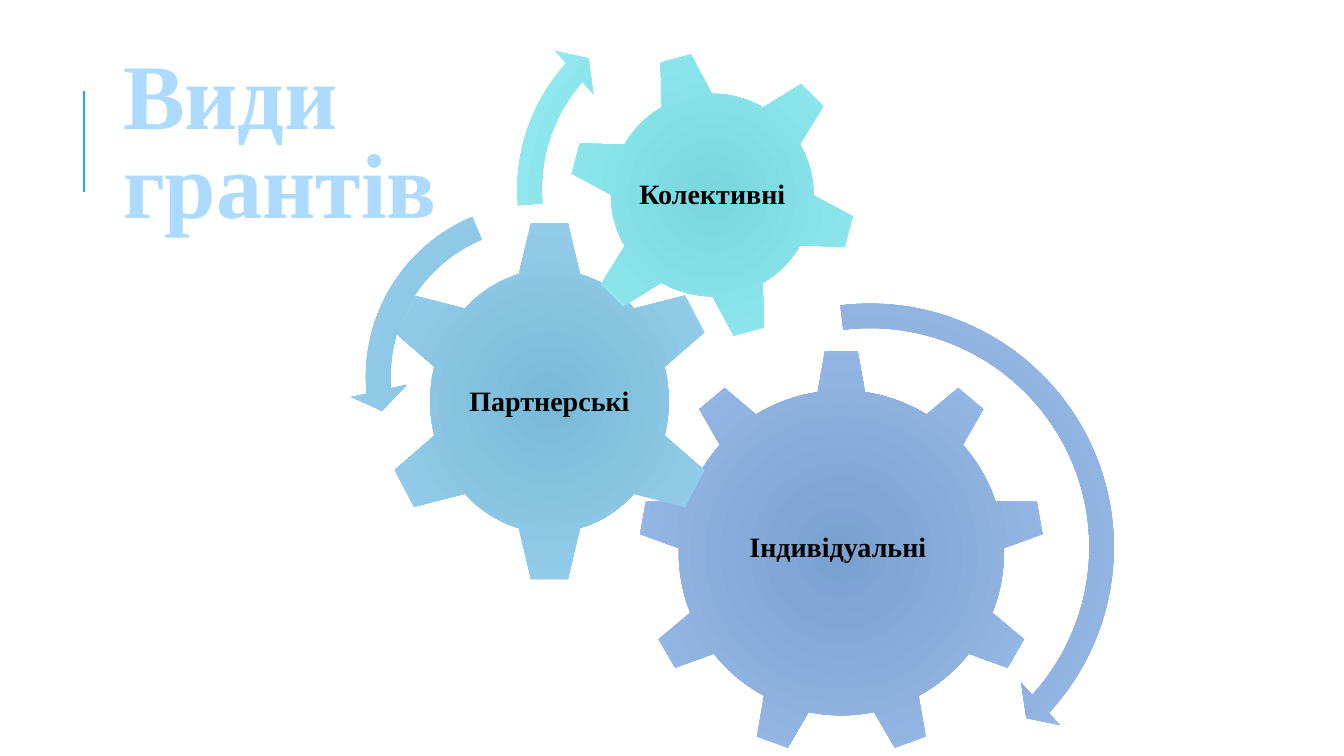
from dataclasses import dataclass

from lxml.etree import SubElement
from pptx import Presentation
from pptx.dml.color import RGBColor
from pptx.enum.shapes import MSO_CONNECTOR, MSO_SHAPE as Preset
from pptx.enum.text import MSO_ANCHOR, PP_ALIGN
from pptx.oxml.ns import qn
from pptx.util import Inches, Pt

FONT = "Times New Roman"
BLACK = RGBColor(0x00, 0x00, 0x00)
TITLE_BLUE = RGBColor(0xAC, 0xDB, 0xFF)
ACCENT = RGBColor(0x1C, 0xAD, 0xE4)
INDIGO = (RGBColor(0x79, 0xA1, 0xD1), RGBColor(0x9E, 0xBE, 0xEB))
SKY = (RGBColor(0x79, 0xBA, 0xD8), RGBColor(0x9D, 0xD3, 0xF1))
AQUA = (RGBColor(0x79, 0xD7, 0xDE), RGBColor(0x9C, 0xF0, 0xF7))


@dataclass
class Grant:
    label: str
    colors: tuple
    gear: Preset
    gear_box: tuple
    label_box: tuple
    arrow: Preset
    arrow_box: tuple
    arrow_bend: tuple
    rotation: int = 0


GRANTS = [
    Grant("Індивідуальні ", INDIGO, Preset.GEAR_9,
          (6.33, 3.47, 4.03, 4.03), (7.14, 4.41, 2.41, 2.07),
          Preset.CIRCULAR_ARROW, (6.05, 2.85, 5.16, 5.16),
          (0.047, 2.99, 25.551, 157.797, 0.055)),
    Grant("Партнерські ", SKY, Preset.GEAR_6,
          (3.76, 2.17, 3.38, 3.62), (4.61, 3.07, 1.68, 1.84),
          Preset.LEFT_CIRCULAR_ARROW, (3.47, 1.86, 3.75, 3.75),
          (0.065, 4.3, 104.891, 148.378, 0.075)),
    Grant("Колективні", AQUA, Preset.GEAR_6,
          (5.63, 0.5, 2.87, 2.87), (6.26, 1.13, 1.61, 1.61),
          Preset.CIRCULAR_ARROW, (4.97, -0.14, 4.04, 4.04),
          (0.06, 3.941, 133.138, 105.082, 0.07), 345),
]


def inches(box):
    return [Inches(length) for length in box]


def fill_radial(shape, colors):
    shape.fill.gradient()
    for stop, color, position in zip(shape.fill.gradient_stops, colors, (0, 1)):
        stop.color.rgb = color
        stop.position = position
    gradient = shape._element.spPr.find(qn("a:gradFill"))
    gradient.remove(gradient.find(qn("a:lin")))
    circle = SubElement(gradient, qn("a:path"), {"path": "circle"})
    SubElement(circle, qn("a:fillToRect"), dict.fromkeys("ltrb", "100000"))


def add_part(slide, preset, box, colors):
    part = slide.shapes.add_shape(preset, *inches(box))
    part.shadow.inherit = False
    part.line.fill.background()
    fill_radial(part, colors)
    return part


def format_run(paragraph, size, color):
    font = paragraph.runs[0].font
    font.name = FONT
    font.size = Pt(size)
    font.bold = True
    font.color.rgb = color


def add_gear(slide, grant):
    gear = add_part(slide, grant.gear, grant.gear_box, grant.colors)
    gear.rotation = grant.rotation
    frame = slide.shapes.add_textbox(*inches(grant.label_box)).text_frame
    frame.word_wrap = True
    frame.vertical_anchor = MSO_ANCHOR.MIDDLE
    frame.margin_left = frame.margin_right = Inches(0.03)
    frame.margin_top = frame.margin_bottom = Inches(0.03)
    frame.text = grant.label
    label = frame.paragraphs[0]
    label.alignment = PP_ALIGN.CENTER
    label.line_spacing = 0.9
    format_run(label, 20, BLACK)


def add_arrow(slide, grant):
    arrow = add_part(slide, grant.arrow, grant.arrow_box, grant.colors)
    for index, bend in enumerate(grant.arrow_bend):
        arrow.adjustments[index] = bend


def add_title(slide, box):
    title = slide.shapes.title
    title.left, title.top, title.width, title.height = inches(box)
    frame = title.text_frame
    frame.word_wrap = True
    frame.vertical_anchor = MSO_ANCHOR.MIDDLE
    frame.text = "Види грантів"
    heading = frame.paragraphs[0]
    heading.alignment = PP_ALIGN.LEFT
    heading.line_spacing = 0.8
    format_run(heading, 66, TITLE_BLUE)


def add_accent(slide, x, top, bottom):
    accent = slide.shapes.add_connector(
        MSO_CONNECTOR.STRAIGHT, *inches((x, bottom, x, top)))
    accent.line.color.rgb = ACCENT
    accent.line.width = Pt(1.5)
    SubElement(accent._element.spPr, qn("a:effectLst"))


def main():
    deck = Presentation()
    deck.slide_width, deck.slide_height = inches((13.33, 7.5))
    slide = deck.slides.add_slide(deck.slide_layouts[5])
    add_accent(slide, 0.83, 0.9, 1.9)
    for grant in GRANTS:
        add_gear(slide, grant)
    for grant in GRANTS:
        add_arrow(slide, grant)
    add_title(slide, (1.12, 0.64, 3.58, 1.64))
    deck.save("out.pptx")


if __name__ == "__main__":
    main()
